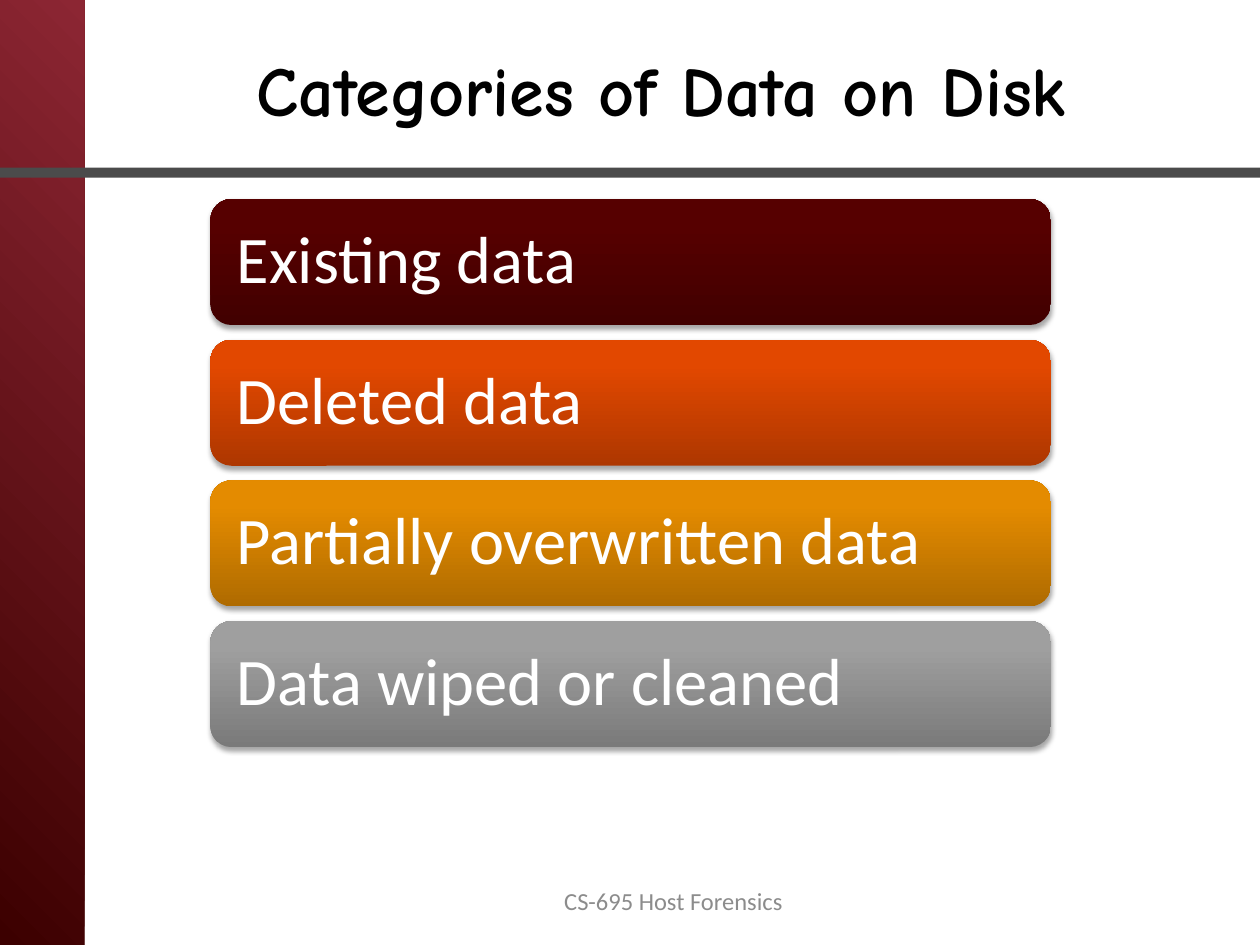
from lxml.etree import SubElement
from pptx import Presentation
from pptx.dml.color import RGBColor
from pptx.enum.shapes import MSO_SHAPE
from pptx.enum.text import MSO_ANCHOR, PP_ALIGN
from pptx.oxml.ns import qn
from pptx.util import Inches, Pt

TITLE = "Categories of Data on Disk"
FOOTER = "CS-695 Host Forensics"
# Label, then gradient colours from bottom to top
CATEGORIES = [
    ("Existing data", ("420000", "560000", "570000")),
    ("Deleted data", ("AE3700", "E24800", "E34800")),
    ("Partially overwritten data", ("AF6B00", "E48B00", "E58B00")),
    ("Data wiped or cleaned", ("7A7A7A", "9F9F9F", "A0A0A0")),
]
GRADIENT_POSITIONS = (0, 80, 100)
FIRST_TOP, LAST_TOP = 1.58, 4.93


def color(hex_value):
    return RGBColor.from_string(hex_value)


def add_block(slide, preset, left, top, width, height):
    """Add a preset shape without line or shadow."""
    shape = slide.shapes.add_shape(
        preset, Inches(left), Inches(top), Inches(width), Inches(height))
    shape.line.fill.background()
    shape.shadow.inherit = False
    return shape


def fill_gradient(shape, stops, angle):
    """Fill with (percent, colour) stops; the angle is counter-clockwise."""
    shape.fill.gradient()
    shape.fill.gradient_angle = angle
    stop_list = shape._element.spPr.find(qn("a:gradFill")).find(qn("a:gsLst"))
    for stop in list(stop_list):
        stop_list.remove(stop)
    for percent, hex_value in stops:
        stop = SubElement(stop_list, qn("a:gs"), pos=str(percent * 1000))
        SubElement(stop, qn("a:srgbClr"), val=hex_value)


def add_soft_shadow(shape):
    effects = shape._element.spPr.find(qn("a:effectLst"))
    shadow = SubElement(
        effects, qn("a:outerShdw"), blurRad=str(Pt(3.1)), dist=str(Pt(1.8)),
        dir="5400000", rotWithShape="0")
    shadow_color = SubElement(shadow, qn("a:srgbClr"), val="000000")
    SubElement(shadow_color, qn("a:alpha"), val="35000")


def set_text(shape, text, font_name, size, hex_value, alignment, bold=False):
    frame = shape.text_frame
    frame.text = text
    frame.word_wrap = True
    frame.vertical_anchor = MSO_ANCHOR.MIDDLE
    paragraph = frame.paragraphs[0]
    paragraph.alignment = alignment
    font = paragraph.runs[0].font
    font.name, font.size, font.bold = font_name, Pt(size), bold
    font.color.rgb = color(hex_value)


def add_category(slide, top, label, colors):
    bar = add_block(slide, MSO_SHAPE.ROUNDED_RECTANGLE, 1.67, top, 6.67, 1)
    fill_gradient(bar, zip(GRADIENT_POSITIONS, colors), 90)
    add_soft_shadow(bar)
    set_text(bar, label, "Calibri", 38, "FFFFFF", PP_ALIGN.LEFT)
    frame = bar.text_frame
    frame.margin_left = frame.margin_right = Inches(0.16)
    frame.margin_top = frame.margin_bottom = Inches(0.16)
    frame.paragraphs[0].line_spacing = 0.9


def main():
    presentation = Presentation()
    presentation.slide_width, presentation.slide_height = Inches(10), Inches(7.5)
    slide = presentation.slides.add_slide(presentation.slide_layouts[5])

    side_band = add_block(slide, MSO_SHAPE.RECTANGLE, 0, 0, 0.67, 7.5)
    fill_gradient(side_band, [(0, "3C0000"), (100, "8C2633")], 45)
    divider = add_block(slide, MSO_SHAPE.RECTANGLE, 0, 1.33, 10, 0.08)
    divider.fill.solid()
    divider.fill.fore_color.rgb = color("4B4B4B")

    title = slide.shapes.title
    title.left, title.top = Inches(1), Inches(0.15)
    title.width, title.height = Inches(8.5), Inches(1.1)
    set_text(title, TITLE, "Comic Neue", 40, "000000", PP_ALIGN.CENTER, bold=True)

    pitch = (LAST_TOP - FIRST_TOP) / (len(CATEGORIES) - 1)
    for index, (label, colors) in enumerate(CATEGORIES):
        add_category(slide, FIRST_TOP + index * pitch, label, colors)

    footer = slide.shapes.add_textbox(
        Inches(4.1), Inches(6.95), Inches(2.49), Inches(0.4))
    set_text(footer, FOOTER, "Calibri", 14, "8C8C8C", PP_ALIGN.CENTER)

    presentation.save("out.pptx")


if __name__ == "__main__":
    main()
